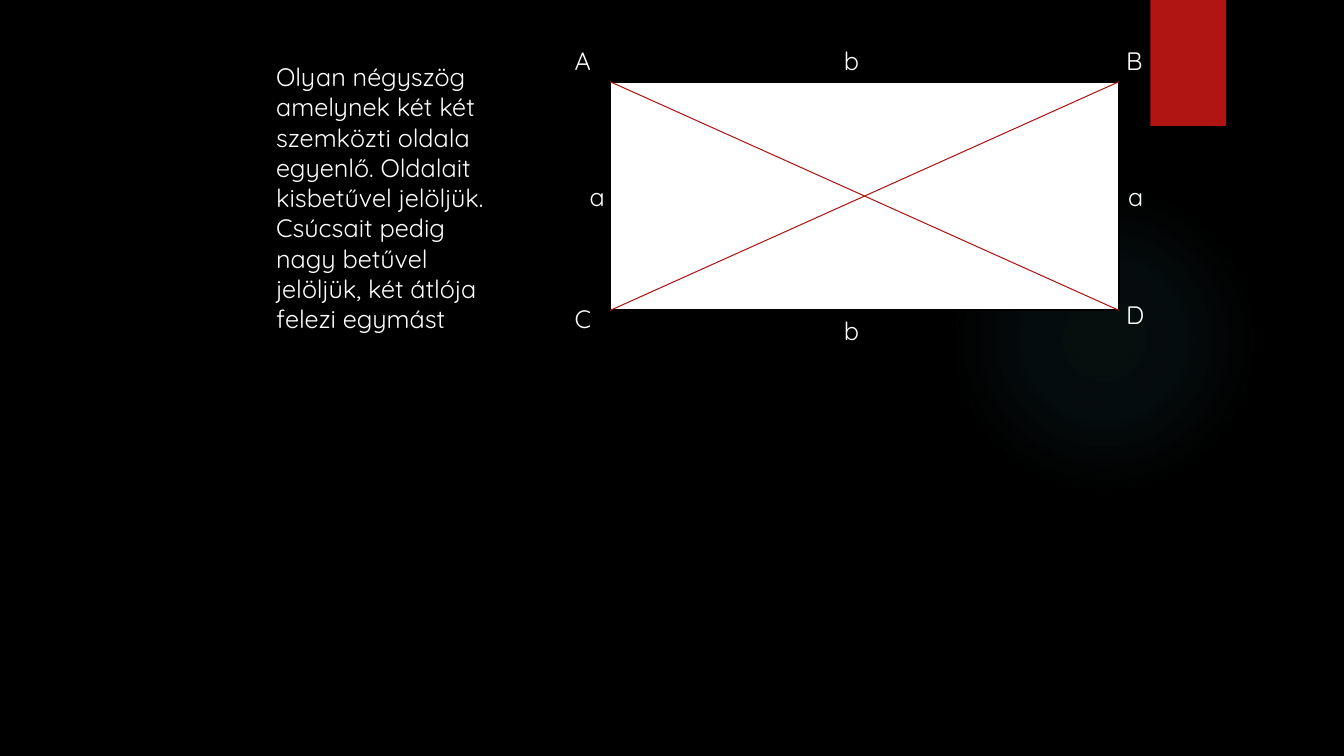
from dataclasses import dataclass

from lxml import etree
from pptx import Presentation
from pptx.dml.color import RGBColor
from pptx.enum.shapes import MSO_CONNECTOR, MSO_SHAPE
from pptx.enum.text import MSO_AUTO_SIZE
from pptx.oxml import parse_xml
from pptx.oxml.ns import nsdecls, qn
from pptx.util import Inches, Pt


@dataclass(frozen=True)
class Theme:
    black: RGBColor = RGBColor.from_string("000000")
    white: RGBColor = RGBColor.from_string("FFFFFF")
    red: RGBColor = RGBColor.from_string("B01513")
    glow: str = "50B9C1"
    font: str = "Quicksand"
    size: Pt = Pt(18)


theme = Theme()


def add_shape(kind, x, y, w, h):
    sp = s.shapes.add_shape(kind, Inches(x), Inches(y), Inches(w), Inches(h))
    sp.shadow.inherit = False
    sp.line.fill.background()
    return sp


def add_text(text, x, y, w, h):
    tb = s.shapes.add_textbox(Inches(x), Inches(y), Inches(w), Inches(h))
    tf = tb.text_frame
    tf.word_wrap = True
    tf.auto_size = MSO_AUTO_SIZE.SHAPE_TO_FIT_TEXT
    r = tf.paragraphs[0].add_run()
    r.text = text
    r.font.name, r.font.size = theme.font, theme.size
    r.font.color.rgb = theme.white


prs = Presentation()
prs.slide_width, prs.slide_height = Inches(13.33), Inches(7.5)
s = prs.slides.add_slide(prs.slide_layouts[6])
s.background.fill.solid()
s.background.fill.fore_color.rgb = theme.black

# Soft glow: a radial gradient that fades out
glow = add_shape(MSO_SHAPE.OVAL, 9.41, 1.83, 3.08, 3.08)
stops = "".join(
    f'<a:gs pos="{pos * 1000}"><a:srgbClr val="{theme.glow}">'
    f'<a:alpha val="{alpha * 1000}"/></a:srgbClr></a:gs>'
    for pos, alpha in [(0, 7), (36, 6), (69, 0)])
grad = parse_xml(
    f'<a:gradFill {nsdecls("a")} rotWithShape="1"><a:gsLst>{stops}</a:gsLst>'
    '<a:path path="circle"><a:fillToRect l="50000" t="50000" r="50000" b="50000"/>'
    '</a:path></a:gradFill>')
glow._element.spPr.find(qn("a:prstGeom")).addnext(grad)

# Red tab at the top edge
tab = add_shape(MSO_SHAPE.RECTANGLE, 11.41, 0, 0.75, 1.25)
tab.fill.solid()
tab.fill.fore_color.rgb = theme.red

# Definition
add_text("Olyan négyszög amelynek két két szemközti oldala egyenlő. "
         "Oldalait kisbetűvel jelöljük. Csúcsait pedig nagy betűvel jelöljük, "
         "két átlója felezi egymást", 2.64, 0.56, 2.42, 2.52)

# Rectangle
left, top, width, height = 6.05, 0.81, 5.05, 2.27
right, bottom = left + width, top + height
rect = add_shape(MSO_SHAPE.RECTANGLE, left, top, width, height)
rect.fill.solid()
rect.fill.fore_color.rgb = theme.white
rect.line.color.rgb = theme.black
rect.line.width = Pt(1.5)

# Side and vertex labels
for label, x, y, w in [
    ("a", 5.75, 1.75, 0.75), ("b", 8.27, 0.4, 0.82),
    ("a", 11.09, 1.75, 0.82), ("b", 8.27, bottom, 0.82),
    ("A", 5.6, 0.4, 0.5), ("B", 11.07, 0.4, 0.5),
    ("C", 5.6, 2.96, 0.7), ("D", 11.07, 2.92, 0.82),
]:
    add_text(label, x, y, w, 0.4)

# Diagonals
for x1, x2 in [(left, right), (right, left)]:
    diagonal = s.shapes.add_connector(
        MSO_CONNECTOR.STRAIGHT, Inches(x1), Inches(top), Inches(x2), Inches(bottom))
    diagonal.line.color.rgb = theme.red
    diagonal.line.width = Pt(0.75)
    etree.SubElement(diagonal._element.spPr, qn("a:effectLst"))

prs.save("out.pptx")
